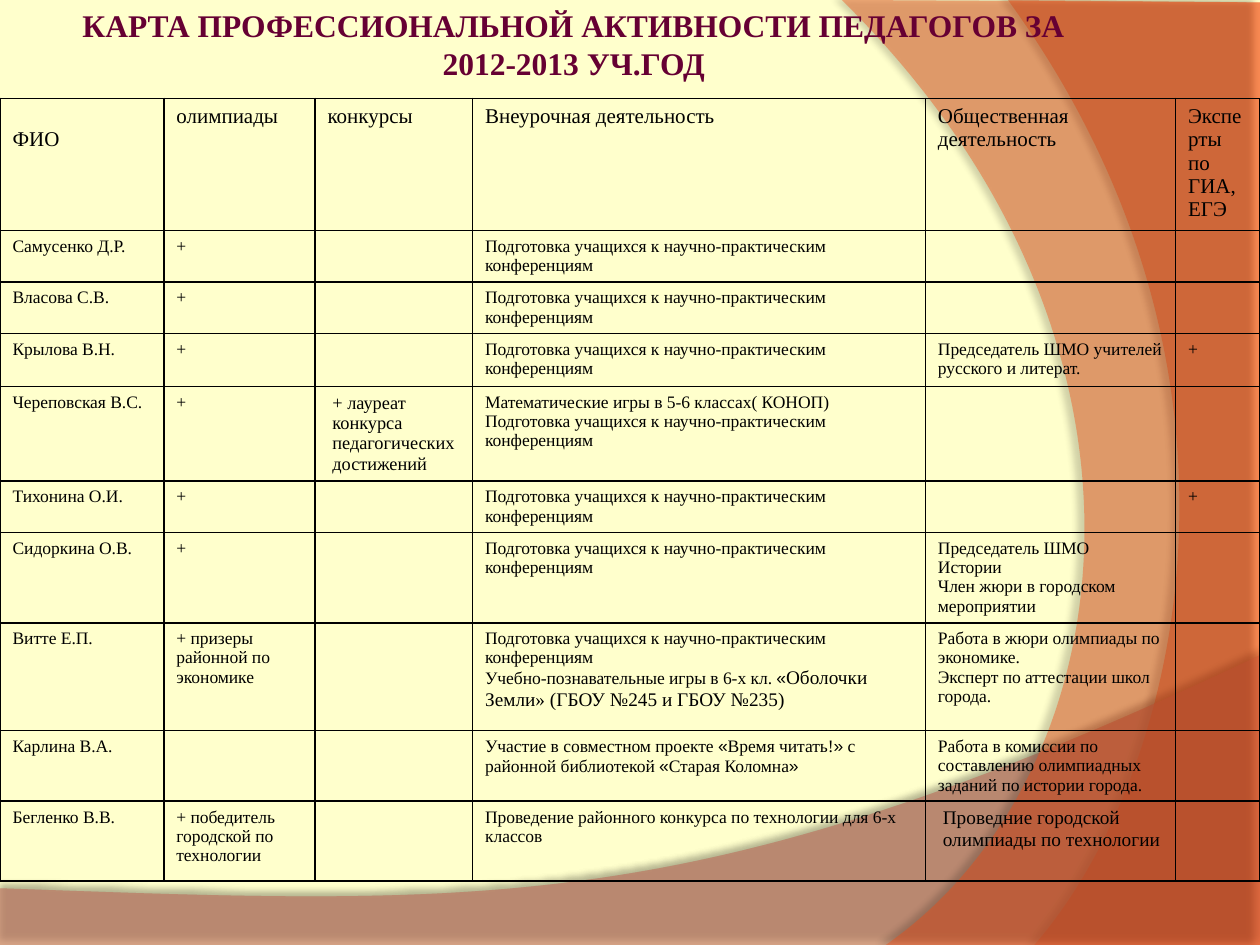
from lxml import etree
from pptx import Presentation
from pptx.dml.color import RGBColor
from pptx.enum.text import MSO_ANCHOR, PP_ALIGN
from pptx.oxml.ns import qn
from pptx.util import Pt

TOP, CENTER = MSO_ANCHOR.TOP, PP_ALIGN.CENTER

THEME = {
    "font": "Times New Roman", "quote_font": "Arial",
    "background": "FFFFCC", "title": "660033", "text": "000000",
    "wave": "C77E69", "arc": "F4480F",
    "title_size": 18, "header_size": 12, "body_size": 10,
}

TITLE = "КАРТА ПРОФЕССИОНАЛЬНОЙ АКТИВНОСТИ ПЕДАГОГОВ ЗА 2012-2013 УЧ.ГОД"
HEADERS = ["ФИО", "олимпиады", "конкурсы", "Внеурочная деятельность",
           "Общественная деятельность", "Эксперты по ГИА, ЕГЭ"]
CONFERENCES = "Подготовка учащихся к научно-практическим конференциям"

# A cell is a string, a list of paragraphs, or empty; a paragraph is a string
# or a tuple of spans; a span is a string or a (text, size) pair.
ROWS = [
    ["Самусенко Д.Р.", "+", "", CONFERENCES, "", ""],
    ["Власова С.В.", "+", "", CONFERENCES, "", ""],
    ["Крылова В.Н.", "+", "", CONFERENCES,
     "Председатель ШМО учителей русского и литерат.", "+"],
    ["Череповская В.С.", "+", "+ лауреат конкурса педагогических достижений",
     ["Математические игры в 5-6 классах( КОНОП)", CONFERENCES], "", ""],
    ["Тихонина О.И.", "+", "", CONFERENCES, "", "+"],
    ["Сидоркина О.В.", "+", "", CONFERENCES,
     ["Председатель ШМО", "Истории", "Член жюри в городском мероприятии"], ""],
    ["Витте Е.П.", "+ призеры районной по экономике", "",
     [CONFERENCES, ("Учебно-познавательные игры в 6-х кл. ", "«",
                    ("Оболочки Земли» (ГБОУ №245 и ГБОУ №235)", 11))],
     ["Работа в жюри олимпиады по экономике.",
      "Эксперт по аттестации школ города."], ""],
    ["Карлина В.А.", "", "",
     [("Участие в совместном проекте ", "«", "Время читать!", "»",
       " с районной библиотекой ", "«", "Старая Коломна", "»")],
     "Работа в комиссии по составлению олимпиадных заданий по истории города.", ""],
    ["Бегленко В.В.", "+ победитель городской по технологии", "",
     "Проведение районного конкурса по технологии для 6-х классов",
     "Проведние городской олимпиады по технологии", ""],
]
INDENTED_SIZES = {(4, 2): 10.5, (9, 4): 11}  # (row, column): size

COLUMN_WIDTHS = [93.6, 86.4, 90, 258.8, 143, 48.2]
ROW_HEIGHTS = [73.7, 29.4, 29.4, 30.2, 53.8, 29.4, 51.4, 61.7, 40.3, 45.7]
TABLE_TOP = 56.2

# Straight corners, then the two control points and the end of the curve.
WAVE = {"corners": [(0, 507.6), (0, 540), (720, 540), (720, 374.4)],
        "curve": [(402.5, 524.9), (281.5, 517.7), (0, 507.6)],
        "color": THEME["wave"], "alpha": 45, "shadow": (35, 4, 3.5, 270)}
NARROW_ARC = {"corners": [(720, 1.4), (720, 540), (591.1, 540)],
              "curve": [(673.2, 445.7), (733, 216), (576, 0)],
              "color": THEME["arc"], "alpha": 40, "shadow": (45, 4, 4, 180)}
WIDE_ARC = {**NARROW_ARC, "corners": [(720, 1.4), (720, 540), (506.2, 540)],
            "curve": [(641.5, 445.7), (681.8, 198), (481, 0)]}


def rgb(name):
    return RGBColor.from_string(THEME[name])


def add_alpha(color, percent):
    etree.SubElement(color, qn("a:alpha"), val=str(percent * 1000))


def bend_last_line(shape, controls):
    """Turn the last straight segment into a cubic curve with these controls."""
    line = list(shape._element.iter(qn("a:lnTo")))[-1]
    line.tag = qn("a:cubicBezTo")
    for index, (x, y) in enumerate(controls):
        point = etree.Element(qn("a:pt"), x=str(Pt(x) - shape.left), y=str(Pt(y) - shape.top))
        line.insert(index, point)


def add_band(page, band):
    points = [(Pt(x), Pt(y)) for x, y in band["corners"] + band["curve"][-1:]]
    builder = page.shapes.build_freeform(*points[0], scale=1.0)
    builder.add_line_segments(points[1:], close=True)
    shape = builder.convert_to_shape()
    bend_last_line(shape, band["curve"][:2])
    shape.fill.solid()
    shape.fill.fore_color.rgb = RGBColor.from_string(band["color"])
    shape.line.fill.background()
    properties = shape._element.spPr
    add_alpha(properties.find(qn("a:solidFill"))[0], band["alpha"])
    opacity, blur, distance, angle = band["shadow"]
    shape.shadow.inherit = False
    shadow = etree.SubElement(
        properties.find(qn("a:effectLst")), qn("a:outerShdw"),
        blurRad=str(int(Pt(blur))), dist=str(int(Pt(distance))),
        dir=str(angle * 60000), rotWithShape="0")
    add_alpha(etree.SubElement(shadow, qn("a:srgbClr"), val="000000"), opacity)


def style_font(font, size, color, bold=False):
    font.name, font.size, font.bold = THEME["font"], Pt(size), bold
    font.color.rgb = rgb(color)


def add_title(page):
    box = page.shapes.add_textbox(Pt(33.8), Pt(0), Pt(588.2), Pt(90))
    frame = box.text_frame
    frame.word_wrap, frame.vertical_anchor = True, TOP
    frame.margin_left = frame.margin_right = Pt(3.6)
    frame.margin_top = frame.margin_bottom = Pt(3.6)
    para = frame.paragraphs[0]
    para.text, para.alignment = TITLE, CENTER
    style_font(para.font, THEME["title_size"], "title", bold=True)


def add_borders(cell):
    properties = cell._tc.get_or_add_tcPr()
    for index, side in enumerate("LRTB"):
        line = etree.Element(qn(f"a:ln{side}"), w=str(int(Pt(1))))
        fill = etree.SubElement(line, qn("a:solidFill"))
        etree.SubElement(fill, qn("a:srgbClr"), val=THEME["text"])
        properties.insert(index, line)


def fill_cell(cell, content, size):
    """Runs carry the font themselves, since row heights are measured from them."""
    cell.fill.background()
    cell.margin_bottom = Pt(0)
    add_borders(cell)
    frame = cell.text_frame
    for index, spans in enumerate(content if isinstance(content, list) else [content]):
        para = frame.add_paragraph() if index else frame.paragraphs[0]
        if not spans:
            style_font(para.font, size, "text")
            continue
        for part in spans if isinstance(spans, tuple) else (spans,):
            text, span_size = part if isinstance(part, tuple) else (part, size)
            span = para.add_run()
            span.text = text
            style_font(span.font, span_size, "text")
            if text in "«»":
                span.font.name = THEME["quote_font"]


def add_activity_table(page):
    rows = [HEADERS] + ROWS
    table = page.shapes.add_table(
        len(rows), len(HEADERS), Pt(0), Pt(TABLE_TOP),
        Pt(sum(COLUMN_WIDTHS)), Pt(sum(ROW_HEIGHTS))).table
    table.first_row = table.horz_banding = False
    for column, width in zip(table.columns, COLUMN_WIDTHS):
        column.width = Pt(width)
    for row, height in zip(table.rows, ROW_HEIGHTS):
        row.height = Pt(height)
    for r, row in enumerate(rows):
        for c, content in enumerate(row):
            size = THEME["body_size"] if r else THEME["header_size"]
            cell = table.cell(r, c)
            fill_cell(cell, content, INDENTED_SIZES.get((r, c), size))
            if (r, c) in INDENTED_SIZES:
                cell.margin_left = Pt(10)
    table.cell(0, 0).margin_top = Pt(17)


def main():
    deck = Presentation()
    deck.slide_width, deck.slide_height = Pt(720), Pt(540)
    page = deck.slides.add_slide(deck.slide_layouts[6])
    page.background.fill.solid()
    page.background.fill.fore_color.rgb = rgb("background")
    for band in (WAVE, NARROW_ARC, WAVE, WIDE_ARC):
        add_band(page, band)
    add_title(page)
    add_activity_table(page)
    deck.save("out.pptx")


if __name__ == "__main__":
    main()
